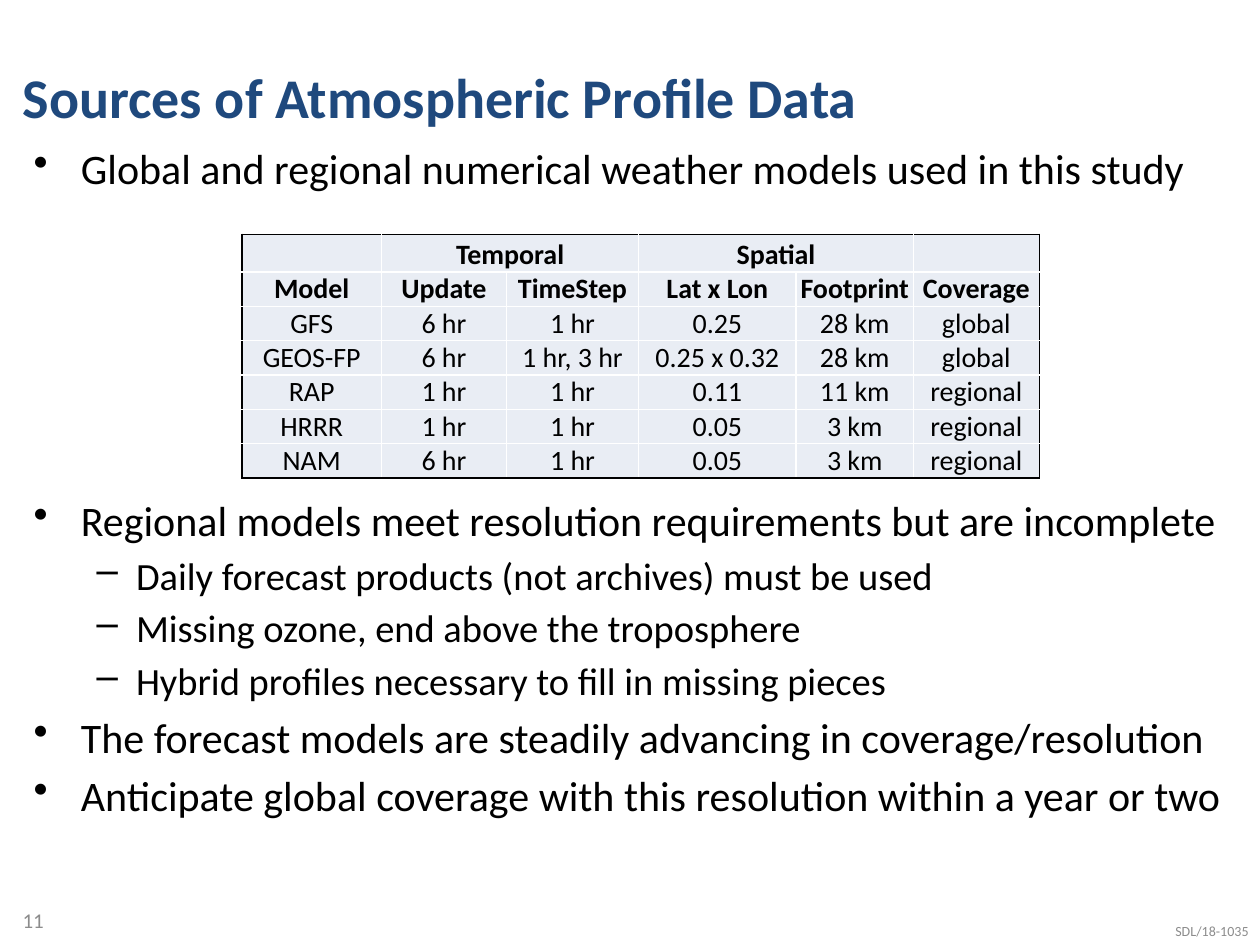
"""Build the slide on sources of atmospheric profile data."""
from typing import NamedTuple

from lxml import etree
from pptx import Presentation
from pptx import util as u
from pptx.dml import color
from pptx.enum import text
from pptx.oxml import ns

FONT = "Calibri"
BLACK, WHITE, NAVY, GRAY, PALE = "000000", "FFFFFF", "1F497D", "8C8C8C", "E9EDF4"
LEFT, CENTER, RIGHT = text.PP_ALIGN.LEFT, text.PP_ALIGN.CENTER, text.PP_ALIGN.RIGHT
TOP, MIDDLE, BOTTOM = text.MSO_ANCHOR.TOP, text.MSO_ANCHOR.MIDDLE, text.MSO_ANCHOR.BOTTOM
NO_MARGINS = dict.fromkeys(("margin_left", "margin_top", "margin_right", "margin_bottom"), 0)


class Level(NamedTuple):
    bullet: str
    margin: float
    hanging: float
    size: float
    space: float


class Bullet(NamedTuple):
    words: str
    level: Level
    space: float | None = None


class Label(NamedTuple):
    words: str
    box: tuple[float, float, float, float]
    size: float
    color: str
    bold: bool = False
    align: text.PP_ALIGN = LEFT
    frame: dict = {}


MAIN = Level("•", 27, 27, 24, 4.3)
SUB = Level("–", 58.5, 22.5, 22, 3.85)
TABLE_GAP = 172.4

BULLETS = [
    Bullet("Global and regional numerical weather models used in this study", MAIN, 0),
    Bullet("Regional models meet resolution requirements but are incomplete", MAIN, TABLE_GAP),
    Bullet("Daily forecast products (not archives) must be used", SUB),
    Bullet("Missing ozone, end above the troposphere", SUB),
    Bullet("Hybrid profiles necessary to fill in missing pieces", SUB),
    Bullet("The forecast models are steadily advancing in coverage/resolution", MAIN),
    Bullet("Anticipate global coverage with this resolution within a year or two", MAIN),
]
LABELS = [
    Label("Sources of Atmospheric Profile Data", (5.8, 0, 545.8, 77.8), 32, NAVY, True,
          frame={"vertical_anchor": BOTTOM}),
    Label("11", (5.8, 511.2, 36, 28.8), 12, GRAY, frame={"vertical_anchor": MIDDLE}),
    Label("SDL/18-1035", (653.8, 525.6, 59.8, 12.2), 8, GRAY, align=RIGHT,
          frame={"vertical_anchor": MIDDLE, **NO_MARGINS}),
]
BODY_BOX = (12.2, 77.8, 696.2, 46.1)

HEADER_ROWS = 2
COLUMN_WIDTHS = [79.9, 71.3, 75.6, 90, 67, 72]
ROW_HEIGHT = 19.6
TABLE_LEFT, TABLE_TOP = 138.2, 133.9
MODELS = [
    ["", "Temporal", "", "Spatial", "", ""],
    ["Model", "Update", "TimeStep", "Lat x Lon", "Footprint", "Coverage"],
    ["GFS", "6 hr", "1 hr", "0.25", "28 km", "global"],
    ["GEOS-FP", "6 hr", "1 hr, 3 hr", "0.25 x 0.32", "28 km", "global"],
    ["RAP", "1 hr", "1 hr", "0.11", "11 km", "regional"],
    ["HRRR", "1 hr", "1 hr", "0.05", "3 km", "regional"],
    ["NAM", "6 hr", "1 hr", "0.05", "3 km", "regional"],
]


def rgb(value: str) -> color.RGBColor:
    return color.RGBColor.from_string(value)


def apply(target, values: dict) -> None:
    for name, value in values.items():
        setattr(target, name, value)


def write(paragraph, words: str, size: float, ink: str, bold: bool = False) -> None:
    run = paragraph.add_run()
    run.text = words
    apply(run.font, {"name": FONT, "size": u.Pt(size), "bold": bold})
    run.font.color.rgb = rgb(ink)


def add_frame(slide, box: tuple, values: dict):
    frame = slide.shapes.add_textbox(*map(u.Pt, box)).text_frame
    apply(frame, {"word_wrap": True, **values})
    return frame


def add_label(slide, label: Label) -> None:
    paragraph = add_frame(slide, label.box, label.frame).paragraphs[0]
    paragraph.alignment = label.align
    write(paragraph, label.words, label.size, label.color, label.bold)


def add_bullets(slide, bullets: list[Bullet]) -> None:
    frame = add_frame(slide, BODY_BOX, {"vertical_anchor": TOP})
    for index, (words, level, space) in enumerate(bullets):
        paragraph = frame.add_paragraph() if index else frame.paragraphs[0]
        properties = paragraph._p.get_or_add_pPr()
        properties.set("marL", str(u.Pt(level.margin)))
        properties.set("indent", str(-u.Pt(level.hanging)))
        etree.SubElement(properties, ns.qn("a:buChar"), char=level.bullet)
        apply(paragraph, {"level": int(level is SUB),
                          "space_before": u.Pt(level.space if space is None else space)})
        write(paragraph, words, level.size, BLACK)


def add_borders(cell, edges: dict[str, str]) -> None:
    properties = cell._tc.get_or_add_tcPr()
    for side, ink in edges.items():
        line = etree.SubElement(properties, ns.qn(f"a:ln{side}"), w=str(u.Pt(1)))
        fill = etree.SubElement(line, ns.qn("a:solidFill"))
        etree.SubElement(fill, ns.qn("a:srgbClr"), val=ink)


def add_models_table(slide, rows: list[list[str]]) -> None:
    last_row, last_column = len(rows) - 1, len(COLUMN_WIDTHS) - 1
    size = sum(COLUMN_WIDTHS), ROW_HEIGHT * len(rows)
    table = slide.shapes.add_table(len(rows), len(COLUMN_WIDTHS),
                                   *map(u.Pt, (TABLE_LEFT, TABLE_TOP, *size))).table
    apply(table, {"first_row": False, "horz_banding": False})
    for column, width in zip(table.columns, COLUMN_WIDTHS):
        column.width = u.Pt(width)
    for i, row in enumerate(rows):
        table.rows[i].height = u.Pt(ROW_HEIGHT)
        for j, words in enumerate(row):
            cell = table.cell(i, j)
            outer = {"L": j == 0, "R": j == last_column, "T": i == 0, "B": i == last_row}
            add_borders(cell, {side: BLACK if edge else WHITE for side, edge in outer.items()})
            apply(cell, {"vertical_anchor": BOTTOM, **NO_MARGINS})
            cell.fill.solid()
            cell.fill.fore_color.rgb = rgb(PALE)
            paragraph = cell.text_frame.paragraphs[0]
            paragraph.alignment = CENTER
            write(paragraph, words, 16, BLACK, i < HEADER_ROWS)
    for start in (1, 3):
        table.cell(0, start).merge(table.cell(0, start + 1))


def main() -> None:
    presentation = Presentation()
    apply(presentation, {"slide_width": u.Pt(720), "slide_height": u.Pt(540)})
    slide = presentation.slides.add_slide(presentation.slide_layouts[6])
    for label in LABELS:
        add_label(slide, label)
    add_bullets(slide, BULLETS)
    add_models_table(slide, MODELS)
    presentation.save("out.pptx")


if __name__ == "__main__":
    main()
